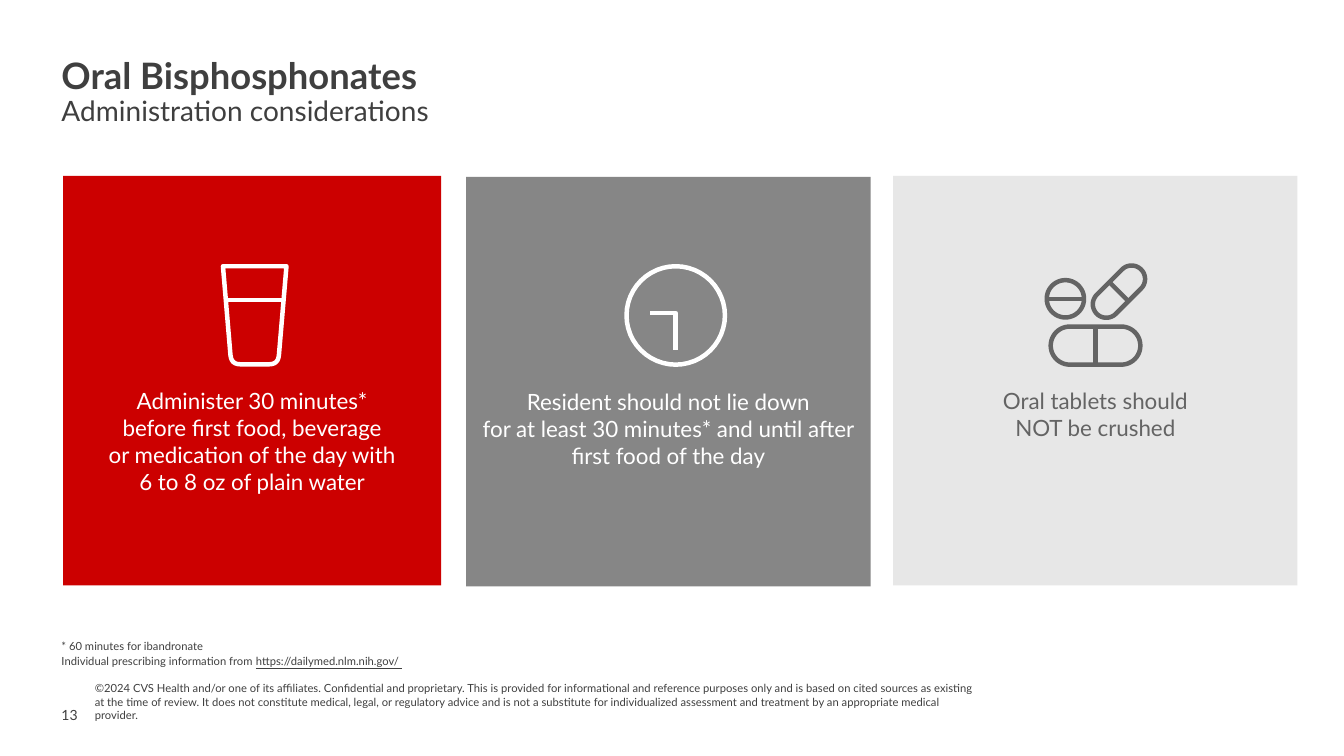
from math import cos, pi, sin

from pptx import Presentation
from pptx.dml.color import RGBColor
from pptx.enum.shapes import MSO_SHAPE
from pptx.enum.text import MSO_ANCHOR, PP_ALIGN
from pptx.util import Cm, Pt

RECT = MSO_SHAPE.RECTANGLE
TOP, MIDDLE, BOTTOM = MSO_ANCHOR.TOP, MSO_ANCHOR.MIDDLE, MSO_ANCHOR.BOTTOM
CENTER = PP_ALIGN.CENTER

COLORS = {"text": "3F3F3F", "white": "FFFFFF", "red": "CC0000",
          "gray": "868686", "light": "E7E7E7", "dark": "646464"}
FONT = "Lato"
STROKE = Pt(3.2)
MARGIN = 1.55


def rgb(name):
    return RGBColor.from_string(COLORS[name])


def write(p, text, size=8, color="text", bold=False, underline=False):
    for i, line in enumerate(text.split("\n")):
        if i:
            p.add_line_break()
        r = p.add_run()
        r.text = line
        r.font.name, r.font.size = FONT, Pt(size)
        r.font.bold, r.font.underline = bold, underline
        r.font.color.rgb = rgb(color)


def set_frame(tf, anchor=TOP, insets=(0, 0, 0, 0)):
    tf.word_wrap = True
    tf.vertical_anchor = anchor
    tf.margin_left, tf.margin_top, tf.margin_right, tf.margin_bottom = map(Cm, insets)
    return tf


def text_box(s, x, y, w, h, anchor=TOP):
    return set_frame(s.shapes.add_textbox(Cm(x), Cm(y), Cm(w), Cm(h)).text_frame, anchor)


def bend(start, corner, end, steps=6):
    ts = [i / steps for i in range(steps + 1)]
    return [tuple((1 - t) ** 2 * a + 2 * t * (1 - t) * b + t * t * c
                  for a, b, c in zip(start, corner, end)) for t in ts]


def capsule(cx, cy, radius, reach=0, tilt=0, steps=24):
    points = []
    for end, side in ((1, -pi / 2), (-1, pi / 2)):
        for i in range(steps + 1):
            a = tilt + side + pi * i / steps
            points.append((cx + end * reach * cos(tilt) + radius * cos(a),
                           cy + end * reach * sin(tilt) + radius * sin(a)))
    return points


def glass():
    rim = [(0.49, 0.06), (2.09, 0.06)]
    base = bend((1.9, 2.3), (1.88, 2.53), (1.66, 2.53))
    base += bend((0.92, 2.53), (0.7, 2.53), (0.68, 2.3))
    return [rim + base], [[(0.57, 0.91), (2.02, 0.91)]]


def clock():
    return [capsule(1.3, 1.3, 1.24)], [[(0.66, 1.24), (1.3, 1.24), (1.3, 2.16)]]


def tablets():
    loops = [capsule(0.53, 0.88, 0.47), capsule(1.29, 2.06, 0.48, 0.65),
             capsule(1.88, 0.7, 0.34, 0.45, -pi / 4)]
    bars = [[(0.06, 0.88), (1, 0.88)], [(1.29, 1.58), (1.29, 2.54)],
            [(1.64, 0.46), (2.12, 0.94)]]
    return loops, bars


def draw_icon(s, x, y, icon, color):
    loops, bars = icon()
    fb = None
    for points, close in [(loop, True) for loop in loops] + [(b, False) for b in bars]:
        pts = [(Cm(x + px), Cm(y + py)) for px, py in points]
        if fb is None:
            fb = s.shapes.build_freeform(*pts[0], scale=1.0)
        else:
            fb.move_to(*pts[0])
        fb.add_line_segments(pts[1:], close=close)
    sp = fb.convert_to_shape()
    sp.shadow.inherit = False
    sp.fill.background()
    sp.line.color.rgb = rgb(color)
    sp.line.width = STROKE


def card(s, x, y, w, h, fill, color, text, icon, icon_dx, icon_dy):
    sp = s.shapes.add_shape(RECT, Cm(x), Cm(y), Cm(w), Cm(h))
    sp.shadow.inherit = False
    sp.fill.solid()
    sp.fill.fore_color.rgb = rgb(fill)
    sp.line.fill.background()
    p = set_frame(sp.text_frame, TOP, (0.25, 5.33, 0.25, 0.13)).paragraphs[0]
    p.alignment = CENTER
    write(p, text, size=16, color=color)
    draw_icon(s, x + icon_dx, y + icon_dy, icon, color)


def header(s, x, y, w, h):
    p = text_box(s, x, y, w, h).paragraphs[0]
    p.line_spacing = 0.9
    write(p, "Oral Bisphosphonates", size=26, bold=True)
    p.add_line_break()
    write(p, "Administration considerations", size=20)


def footnotes(s, x, y, w, h):
    tf = text_box(s, x, y, w, h, BOTTOM)
    write(tf.paragraphs[0], "* 60 minutes for ibandronate")
    p = tf.add_paragraph()
    p.space_before = Pt(1)
    write(p, "Individual prescribing information from ")
    write(p, "https://dailymed.nlm.nih.gov/ ", underline=True)


def footer(s, x, y, w, h):
    number = text_box(s, x, y + 0.52, 0.84, 0.64, MIDDLE)
    write(number.paragraphs[0], "13", size=10)
    legal = text_box(s, x + 0.84, y, w - 0.84, h, BOTTOM)
    write(legal.paragraphs[0],
          "©2024 CVS Health and/or one of its affiliates. Confidential and proprietary. "
          "This is provided for informational and reference purposes only and is based on "
          "cited sources as existing at the time of review. It does not constitute medical, "
          "legal, or regulatory advice and is not a substitute for individualized assessment "
          "and treatment by an appropriate medical provider.")


def main():
    prs = Presentation()
    prs.slide_width, prs.slide_height = Cm(33.87), Cm(19.05)
    s = prs.slides.add_slide(prs.slide_layouts[6])
    header(s, MARGIN, 1.47, 26.85, 1.98)
    cards = [
        (1.59, 4.43, 9.53, "red", "white",
         "Administer 30 minutes*\nbefore first food, beverage\n"
         "or medication of the day with\n6 to 8 oz of plain water",
         glass, 3.54, 2.22),
        (11.75, 4.46, 10.19, "gray", "white",
         "Resident should not lie down\n"
         "for at least 30 minutes* and until after first food of the day",
         clock, 3.98, 2.19),
        (22.51, 4.43, 10.19, "light", "dark",
         "Oral tablets should\nNOT be crushed",
         tablets, 3.81, 2.22),
    ]
    for x, y, w, *content in cards:
        card(s, x, y, w, 10.32, *content)
    footnotes(s, MARGIN, 15.55, 22.86, 1.27)
    footer(s, MARGIN, 17.17, 23.19, 1.02)
    prs.save("out.pptx")


if __name__ == "__main__":
    main()
